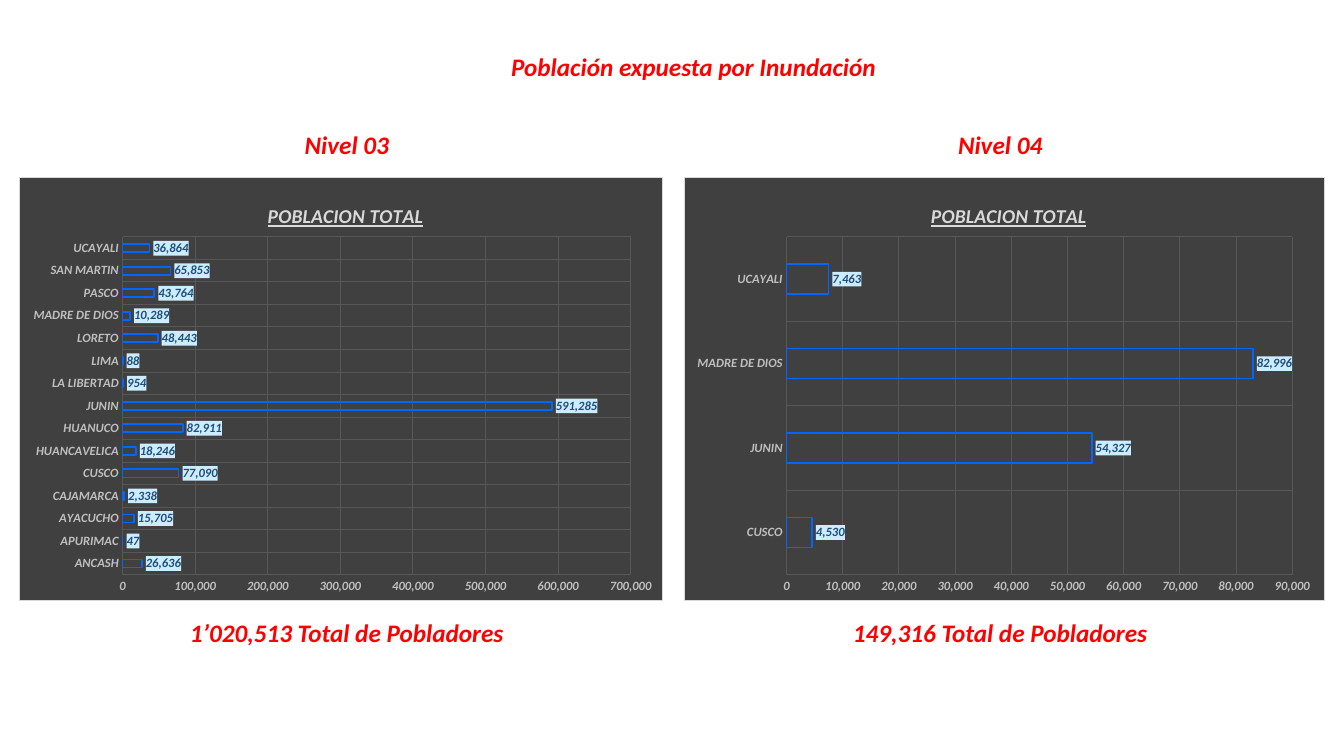
from pptx import Presentation
from pptx.chart.data import CategoryChartData
from pptx.dml.color import RGBColor
from pptx.enum.chart import XL_CHART_TYPE, XL_LABEL_POSITION, XL_TICK_MARK
from pptx.enum.text import MSO_AUTO_SIZE, PP_ALIGN
from pptx.oxml import parse_xml
from pptx.oxml.ns import nsdecls, qn
from pptx.util import Inches, Pt

HUES = {"red": "FF0000", "dark": "404040", "edge": "D9D9D9", "grid": "575757",
        "axis": "BFBFBF", "bar": "0066FF", "label": "1F4E79", "pale": "CCECFF",
        "black": "000000"}
FACE = "Calibri"
TEXTS = [
    ("Población expuesta por Inundación", 4.95, 0.46, 3.86, False),
    ("Nivel 03", 2.9, 1.23, 1.08, True),
    ("Nivel 04", 9.38, 1.23, 1.08, True),
    ("1’020,513 Total de Pobladores", 1.76, 6.08, 3.36, True),
    ("149,316 Total de Pobladores", 8.33, 6.08, 3.18, True),
]
TITLE = "POBLACION TOTAL"
LEVEL3 = {"ANCASH": 26636, "APURIMAC": 47, "AYACUCHO": 15705, "CAJAMARCA": 2338,
          "CUSCO": 77090, "HUANCAVELICA": 18246, "HUANUCO": 82911,
          "JUNIN": 591285, "LA LIBERTAD": 954, "LIMA": 88, "LORETO": 48443,
          "MADRE DE DIOS": 10289, "PASCO": 43764, "SAN MARTIN": 65853,
          "UCAYALI": 36864}
LEVEL4 = {"CUSCO": 4530, "JUNIN": 54327, "MADRE DE DIOS": 82996, "UCAYALI": 7463}
CHARTS = [(LEVEL3, 0.19, 6.39, 700000, 100000), (LEVEL4, 6.78, 6.36, 90000, 10000)]
TOP, HIGH = 1.76, 4.2
PLOT = {"x": 0.16, "y": 0.14, "w": 0.79, "h": 0.8}
HEAD = {"x": 0.38, "y": 0.05}


def hue(name):
    return RGBColor.from_string(HUES[name])


def style(font, size, name, bold=True):
    font.name, font.size = FACE, Pt(size)
    font.bold = font.italic = bold
    font.color.rgb = hue(name)


def place(owner, spot, index, inner=False):
    for old in owner.findall(qn("c:layout")):
        owner.remove(old)
    target = '<c:layoutTarget val="inner"/>' if inner else ""
    modes = "".join(f'<c:{key}Mode val="edge"/>' for key in "xy")
    sizes = "".join(f'<c:{key} val="{val}"/>' for key, val in spot.items())
    owner.insert(index, parse_xml(
        f'<c:layout {nsdecls("c")}><c:manualLayout>{target}{modes}{sizes}'
        '</c:manualLayout></c:layout>'))


def paint(owner, fill, line=""):
    edge = (f'<a:ln w="9525"><a:solidFill><a:srgbClr val="{line}"/></a:solidFill></a:ln>'
            if line else "")
    owner.find(qn("c:txPr")).addprevious(parse_xml(
        f'<c:spPr {nsdecls("c", "a")}><a:solidFill><a:srgbClr val="{fill}"/>'
        f'</a:solidFill>{edge}</c:spPr>'))


def add_text(slide, text, left, top, width, wrap):
    frame = slide.shapes.add_textbox(
        Inches(left), Inches(top), Inches(width), Inches(0.4)).text_frame
    frame.word_wrap = wrap
    frame.auto_size = MSO_AUTO_SIZE.SHAPE_TO_FIT_TEXT
    frame.text = text
    line = frame.paragraphs[0]
    line.alignment = PP_ALIGN.CENTER
    style(line.runs[0].font, 18, "red")


def add_bars(slide, people, left, width, limit, step):
    data = CategoryChartData(number_format="#,##0")
    data.categories = list(people)
    data.add_series("Series 1", list(people.values()))
    chart = slide.shapes.add_chart(
        XL_CHART_TYPE.BAR_CLUSTERED, Inches(left), Inches(TOP),
        Inches(width), Inches(HIGH), data).chart
    style(chart.font, 10, "black", False)
    paint(chart.element if hasattr(chart, "element") else chart._chartSpace,
          HUES["dark"], HUES["edge"])
    chart.has_legend = False
    chart.has_title = True
    frame = chart.chart_title.text_frame
    frame.text = TITLE
    font = frame.paragraphs[0].runs[0].font
    style(font, 14, "edge")
    font.underline = True
    chart.chart_title.include_in_layout = False
    place(chart.chart_title._element, HEAD, 1)

    for axis in (chart.category_axis, chart.value_axis):
        axis.major_tick_mark = axis.minor_tick_mark = XL_TICK_MARK.NONE
        axis.has_major_gridlines = True
        grid = axis.major_gridlines.format.line
        grid.color.rgb, grid.width = hue("grid"), Pt(0.75)
        axis.format.line.fill.background()
        style(axis.tick_labels.font, 9, "axis")
    scale = chart.value_axis
    scale.minimum_scale, scale.maximum_scale, scale.major_unit = 0, limit, step
    scale.tick_labels.number_format = "#,##0"
    scale.tick_labels.number_format_is_linked = False

    plot = chart.plots[0]
    plot.gap_width, plot.overlap = 182, -50
    plot.vary_by_categories = False
    bars = plot.series[0]
    bars.format.fill.background()
    bars.format.line.color.rgb, bars.format.line.width = hue("bar"), Pt(1.25)
    labels = bars.data_labels
    labels.show_value = True
    labels.number_format, labels.number_format_is_linked = "#,##0", False
    labels.position = XL_LABEL_POSITION.OUTSIDE_END
    style(labels.font, 9, "label")
    paint(labels._element, HUES["pale"])
    place(plot._element.getparent(), PLOT, 0, True)


def main():
    deck = Presentation()
    deck.slide_width, deck.slide_height = Inches(13.33), Inches(7.5)
    slide = deck.slides.add_slide(deck.slide_layouts[6])
    for item in TEXTS:
        add_text(slide, *item)
    for item in CHARTS:
        add_bars(slide, *item)
    deck.save("out.pptx")


if __name__ == "__main__":
    main()
